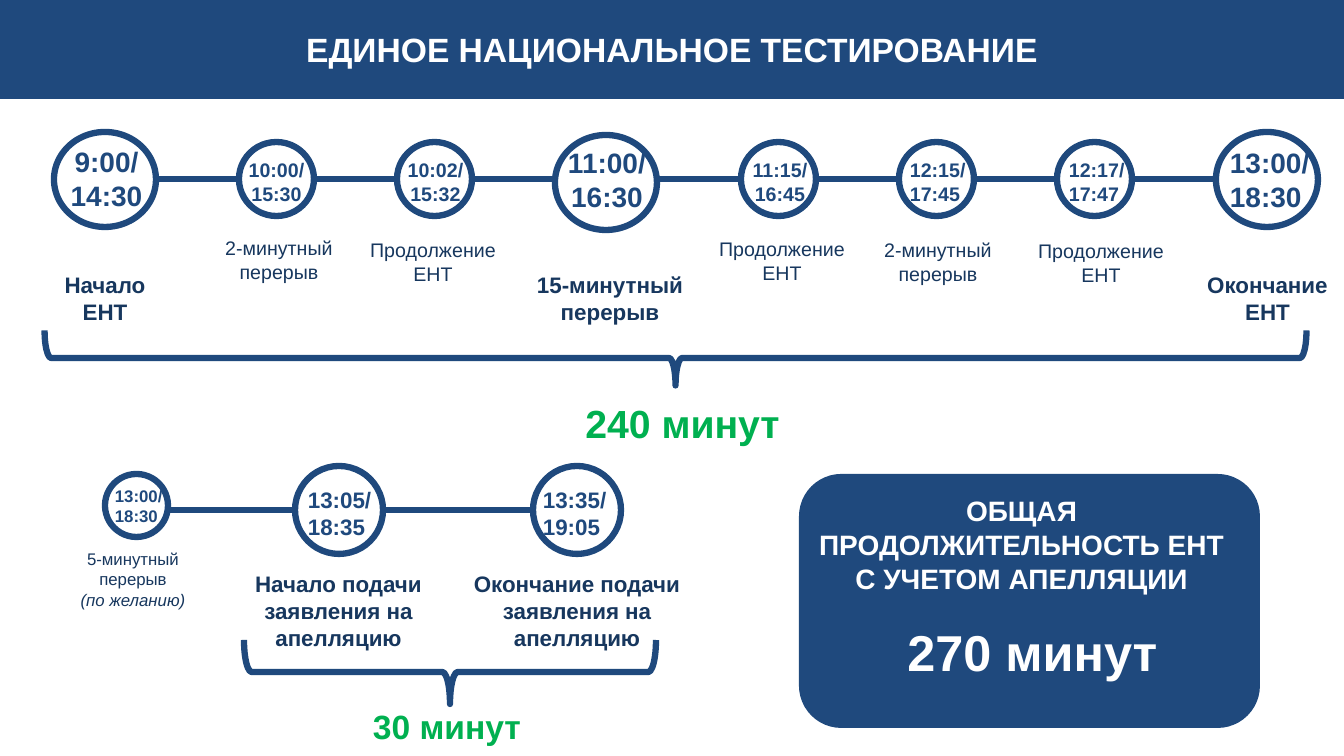
from lxml.etree import SubElement
from pptx import Presentation
from pptx.dml.color import RGBColor
from pptx.enum.shapes import MSO_CONNECTOR as Link, MSO_SHAPE as Form
from pptx.enum.text import MSO_ANCHOR as Anchor, MSO_AUTO_SIZE as Fit, PP_ALIGN as Align
from pptx.oxml.ns import qn
from pptx.util import Emu, Pt

# Content, lengths in px
BLUE, NAVY, GREEN, WHITE = "1F497D", "17375E", "00B050", "FFFFFF"
MID, LEFT = Align.CENTER, Align.LEFT
TITLE = "ЕДИНОЕ НАЦИОНАЛЬНОЕ ТЕСТИРОВАНИЕ"

# Kind of stop: circle width, height, clock size, label size, bold, label rows
KINDS = {
    "main": (102, 95, 20, 16, True, 2),
    "minor": (75, 74, 14, 14, False, 2),
    "appeal": (88, 88, 16, 16, True, 3),
    "pause": (63, 63, 12, 12, False, 3),
}
# Kind, circle x y, clock x y width, clock alignment, times, label x y width, label
STOPS = [
    ("main", 54, 132, (60, 140, 93), MID, "9:00/\n14:30", (37, 266, 136), "Начало ЕНТ"),
    ("minor", 239, 142, (235, 153, 83), MID, "10:00/\n15:30", (196, 231, 166), "2-минутный перерыв"),
    ("minor", 397, 142, (397, 153, 77), MID, "10:02/\n15:32", (347, 233, 172), "Продолжение ЕНТ"),
    ("main", 555, 135, (552, 141, 110), MID, "11:00/\n16:30", (500, 266, 220), "15-минутный перерыв"),
    ("minor", 741, 142, (736, 153, 88), MID, "11:15/\n16:45", (696, 232, 172), "Продолжение ЕНТ"),
    ("minor", 899, 142, (900, 153, 77), LEFT, "12:15/\n17:45", (855, 233, 166), "2-минутный перерыв"),
    ("minor", 1057, 142, (1059, 153, 77), LEFT, "12:17/\n17:47", (1015, 234, 172), "Продолжение ЕНТ"),
    ("main", 1216, 132, (1220, 141, 101), LEFT, "13:00/\n18:30", (1196, 266, 143), "Окончание ЕНТ"),
    ("pause", 105, 474, (105, 481, 69), LEFT, "13:00/\n18:30", (69, 544, 128),
     "5-минутный перерыв\n(по желанию)"),
    ("appeal", 295, 466, (298, 481, 85), LEFT, "13:05/\n18:35", (235, 565, 207),
     "Начало подачи заявления на апелляцию"),
    ("appeal", 533, 466, (533, 481, 85), LEFT, "13:35/\n19:05", (458, 565, 238),
     "Окончание подачи заявления на апелляцию"),
]
AXES = [(108, 1314, 179), (163, 545, 510)]
BRACES = [(648, -273, 55, 1262), (418, 466, 64, 412)]
# Place, text, size, rows, colour, wrap
NOTES = [
    ((574, 394, 217), "240 минут", 28, 1, GREEN, False),
    ((362, 701, 170), "30 минут", 24, 1, GREEN, False),
    ((799, 489, 445), "ОБЩАЯ ПРОДОЛЖИТЕЛЬНОСТЬ ЕНТ С УЧЕТОМ АПЕЛЛЯЦИИ", 20, 3, WHITE, True),
    ((886, 616, 293), "270 минут", 36, 1, WHITE, True),
]
SCALE = 914400 / 100.8
ROW = 1.68  # px of line height per point of type
PAD = 10


def px(n):
    return Emu(round(n * SCALE))


def rgb(code):
    return RGBColor.from_string(code)


def style(frame, size, color, bold, align):
    for para in frame.paragraphs:
        para.alignment = align
        font = para.font
        font.name, font.size, font.bold = "Arial", Pt(size), bold
        font.color.rgb = rgb(color)


def stroke(line, width=4.5):
    line.color.rgb, line.width = rgb(BLUE), Pt(width)


def form(kind, place, fill=None, edge=True):
    item = slide.shapes.add_shape(kind, *map(px, place))
    item.shadow.inherit = False
    if fill:
        item.fill.solid()
        item.fill.fore_color.rgb = rgb(fill)
    else:
        item.fill.background()
    if edge:
        stroke(item.line)
    else:
        item.line.fill.background()
    return item


def write(place, text, size, rows, color, bold=True, align=MID, wrap=True):
    high = rows * size * ROW + PAD
    frame = slide.shapes.add_textbox(*map(px, (*place, high))).text_frame
    frame.word_wrap = wrap
    frame.text = text
    style(frame, size, color, bold, align)
    return frame


deck = Presentation()
deck.slide_width, deck.slide_height = px(1344), px(756)
slide = deck.slides.add_slide(deck.slide_layouts[5])

# Title band
head = slide.shapes.title
head.left, head.top, head.width, head.height = map(px, (0, 0, 1344, 98))
head.fill.solid()
head.fill.fore_color.rgb = rgb(BLUE)
stroke(head.line, 2)
frame = head.text_frame
frame.text = TITLE
frame.auto_size, frame.vertical_anchor = Fit.NONE, Anchor.MIDDLE
frame.margin_left = frame.margin_right = px(7)
frame.margin_top = frame.margin_bottom = px(4)
style(frame, 24, WHITE, True, MID)

# Time axes
for start, end, y in AXES:
    axis = slide.shapes.add_connector(Link.STRAIGHT, px(start), px(y), px(end), px(y))
    stroke(axis.line)
    SubElement(axis._element.spPr, qn("a:effectLst"))

# Stops with clock and label
for kind, x, y, spot, align, times, under, label in STOPS:
    wide, high, big, small, bold, rows = KINDS[kind]
    form(Form.OVAL, (x, y, wide, high), WHITE)
    write(spot, times, big, 2, BLUE, align=align, wrap=False)
    frame = write(under, label, small, rows, NAVY, bold)
    for para in frame.paragraphs[1:]:
        para.font.italic = True

# Braces under the axes
for place in BRACES:
    brace = form(Form.RIGHT_BRACE, place)
    brace.rotation = 90
    brace.adjustments[0] = 0.12

# Total panel and durations
form(Form.ROUNDED_RECTANGLE, (799, 474, 461, 254), BLUE, False)
for place, text, size, rows, color, wrap in NOTES:
    write(place, text, size, rows, color, wrap=wrap)

deck.save("out.pptx")
